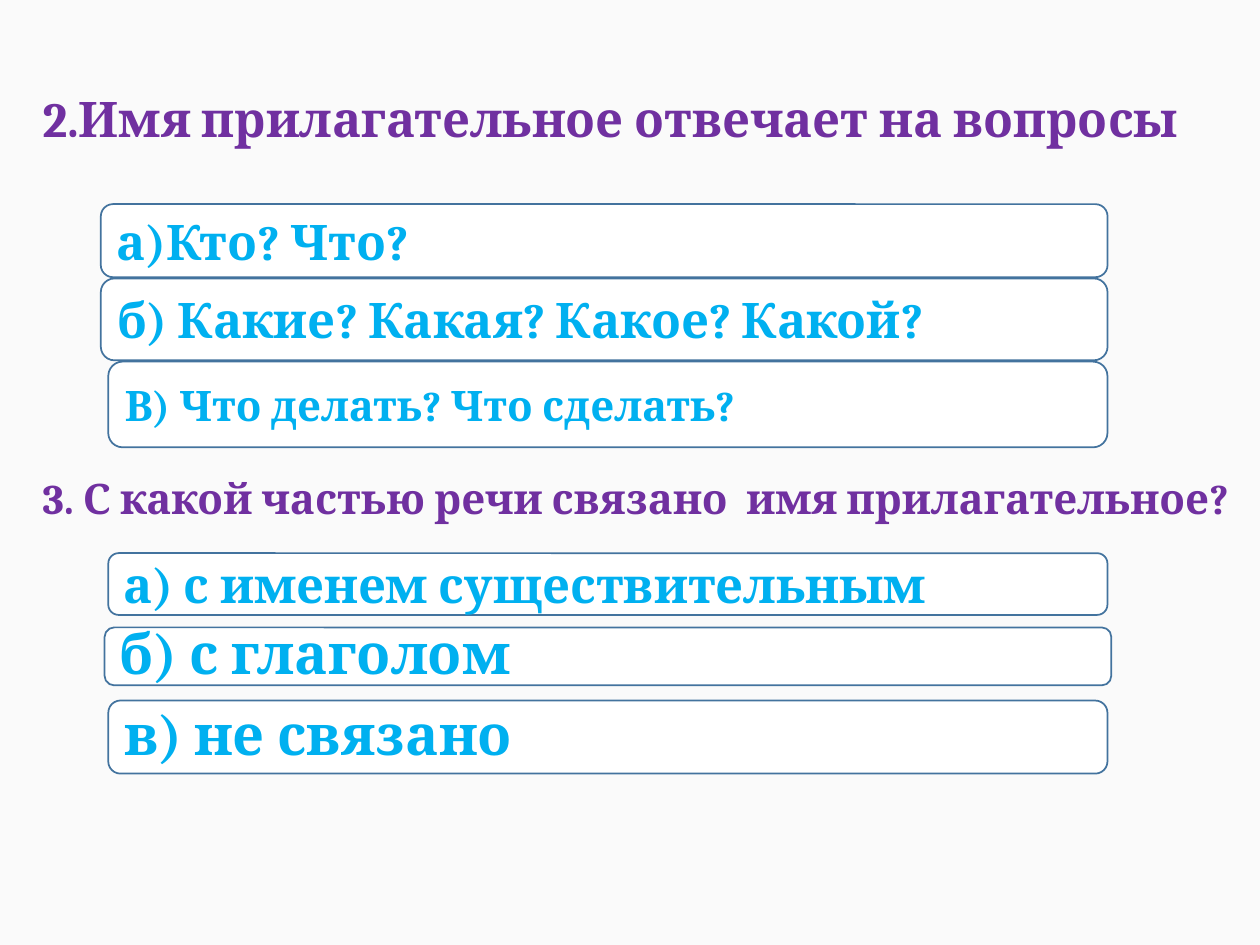
"""Build a quiz slide about adjectives: two questions with three answers each."""
from pptx import Presentation
from pptx.dml.color import RGBColor
from pptx.enum import shapes, text
from pptx.util import Inches, Pt

COLORS = {"page": "FAFAFA", "card": "FFFFFF", "border": "43739E",
          "question": "7030A0", "answer": "00B0F0"}

questions = [
    ("2.Имя прилагательное отвечает на вопросы", 0.24, 0.65, 10.78, 0.57, 28),
    ("3. С какой частью речи связано  имя прилагательное?", 0.24, 3.7, 9.91, 0.51, 24),
]
answers = [
    ("а)Кто? Что?", 0.8, 1.62, 7.99, 0.58, 28, 1.0),
    ("б) Какие? Какая? Какое? Какой?", 0.8, 2.21, 7.99, 0.65, 28, 1.0),
    ("В) Что делать? Что сделать?", 0.86, 2.87, 7.93, 0.68, 24, 1.0),
    ("а) с именем существительным", 0.86, 4.39, 7.93, 0.49, 28, 1.0),
    ("б) с глаголом", 0.83, 4.98, 7.99, 0.46, 32, 0.9),
    ("в) не связано", 0.86, 5.56, 7.93, 0.58, 32, 0.9),
]


def color(name):
    return RGBColor.from_string(COLORS[name])


def write(box, wording, size, color_name, spacing=1.0):
    frame = box.text_frame
    frame.word_wrap = True
    frame.text = wording
    para = frame.paragraphs[0]
    para.alignment = text.PP_ALIGN.LEFT
    para.line_spacing = spacing
    font = para.runs[0].font
    font.name = "Cambria"
    font.size = Pt(size)
    font.bold = True
    font.color.rgb = color(color_name)


deck = Presentation()
deck.slide_width, deck.slide_height = Inches(10), Inches(7.5)
page = deck.slides.add_slide(deck.slide_layouts[6])
page.background.fill.solid()
page.background.fill.fore_color.rgb = color("page")

for wording, left, top, width, height, size in questions:
    box = page.shapes.add_textbox(Inches(left), Inches(top), Inches(width), Inches(height))
    write(box, wording, size, "question")
    box.text_frame.auto_size = text.MSO_AUTO_SIZE.SHAPE_TO_FIT_TEXT

for wording, left, top, width, height, size, spacing in answers:
    card = page.shapes.add_shape(shapes.MSO_SHAPE.ROUNDED_RECTANGLE, Inches(left),
                                 Inches(top), Inches(width), Inches(height))
    card.shadow.inherit = False
    card.fill.solid()
    card.fill.fore_color.rgb = color("card")
    card.line.color.rgb = color("border")
    card.line.width = Pt(1)
    card.text_frame.vertical_anchor = text.MSO_ANCHOR.MIDDLE
    write(card, wording, size, "answer", spacing)

deck.save("out.pptx")
